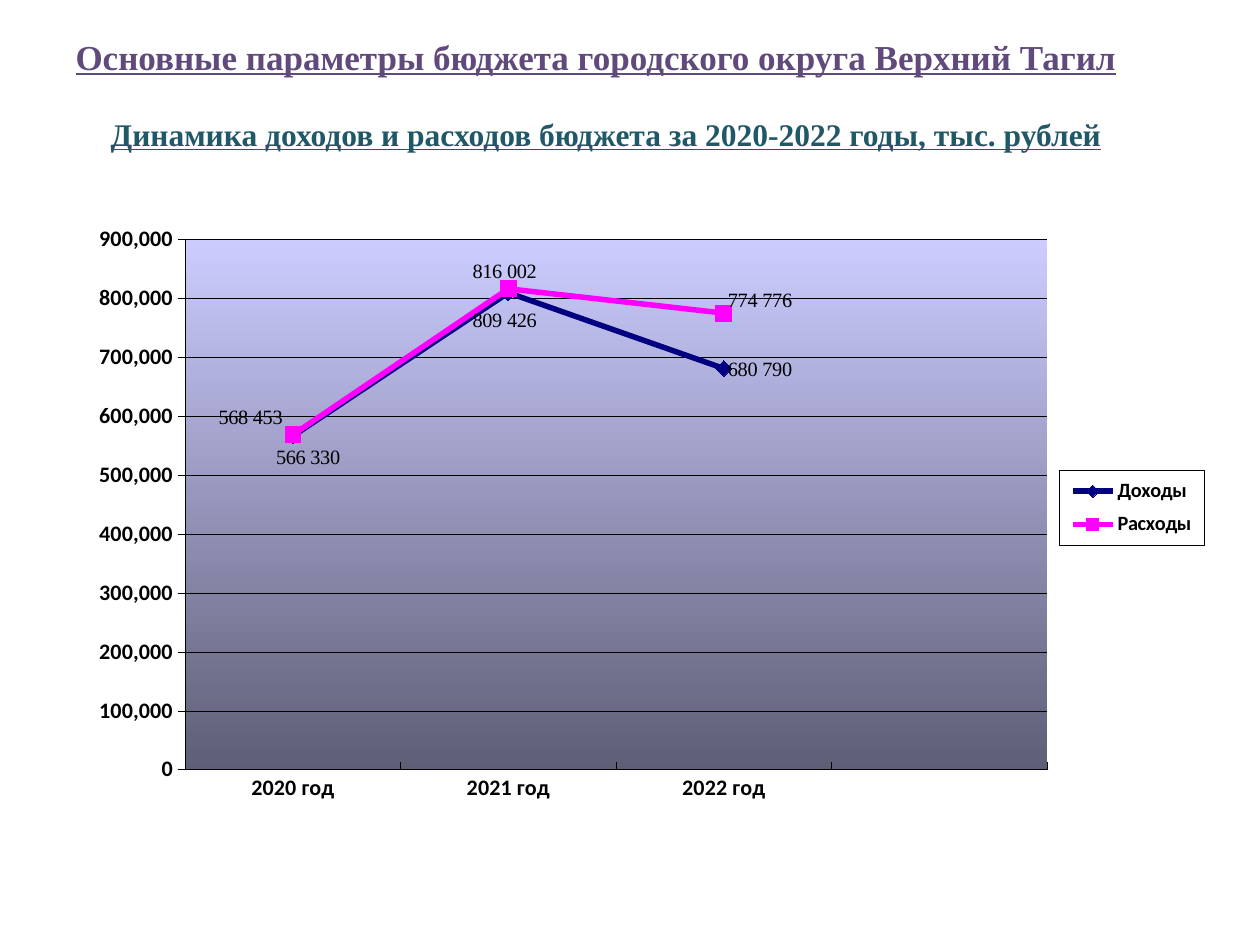
from pptx import Presentation
from pptx.chart.data import CategoryChartData
from pptx.dml.color import RGBColor
from pptx.enum.chart import (XL_CHART_TYPE, XL_LABEL_POSITION, XL_LEGEND_POSITION,
                             XL_MARKER_STYLE, XL_TICK_MARK)
from pptx.enum.text import MSO_ANCHOR, PP_ALIGN
from pptx.oxml import parse_xml
from pptx.oxml.ns import nsdecls
from pptx.util import Inches, Pt

LINE_MARKERS = XL_CHART_TYPE.LINE_MARKERS
ABOVE, BELOW = XL_LABEL_POSITION.ABOVE, XL_LABEL_POSITION.BELOW
LEFT, RIGHT = XL_LABEL_POSITION.LEFT, XL_LABEL_POSITION.RIGHT
LEGEND_RIGHT = XL_LEGEND_POSITION.RIGHT
DIAMOND, SQUARE = XL_MARKER_STYLE.DIAMOND, XL_MARKER_STYLE.SQUARE
TICK_INSIDE, TICK_CROSS, TICK_NONE = XL_TICK_MARK.INSIDE, XL_TICK_MARK.CROSS, XL_TICK_MARK.NONE
ALIGN_LEFT, ALIGN_CENTER = PP_ALIGN.LEFT, PP_ALIGN.CENTER
ANCHOR_TOP = MSO_ANCHOR.TOP

BLACK = RGBColor(0x00, 0x00, 0x00)
PURPLE = RGBColor(0x60, 0x4A, 0x7B)
TEAL = RGBColor(0x21, 0x58, 0x68)
NAVY = RGBColor(0x00, 0x00, 0x80)
MAGENTA = RGBColor(0xFF, 0x00, 0xFF)
WHITE = RGBColor(0xFF, 0xFF, 0xFF)
PLOT_TOP = RGBColor(0xCC, 0xCC, 0xFF)
PLOT_BOTTOM = RGBColor(0x5E, 0x5E, 0x76)

SERIF, SANS = "Times New Roman", "Calibri"
AMOUNT_FORMAT = "#,##0"
CHART_WIDTH, CHART_HEIGHT = 8.98, 5.08
YEARS = ["2020 год", "2021 год", "2022 год", ""]
SERIES = [
    ("Доходы", [566330, 809426, 680790, None], NAVY, DIAMOND,
     [(BELOW, 0.12, -0.01), (BELOW, -0.03, 0.04), (RIGHT, -0.07, 0.01)]),
    ("Расходы", [568453, 816002, 774776, None], MAGENTA, SQUARE,
     [(LEFT, 0.02, -0.13), (ABOVE, -0.03, 0.05), (RIGHT, -0.07, -0.1)]),
]


def set_font(font, name, size, color=BLACK, bold=True):
    font.name = name
    font.size = Pt(size)
    font.bold = bold
    font.color.rgb = color


def set_line(line, color, width):
    line.color.rgb = color
    line.width = Pt(width)


def add_heading(slide, text, left, top, width, height, size, color, align):
    heading = slide.shapes.add_textbox(Inches(left), Inches(top), Inches(width), Inches(height))
    frame = heading.text_frame
    frame.word_wrap = True
    frame.vertical_anchor = ANCHOR_TOP
    paragraph = frame.paragraphs[0]
    paragraph.text = text
    paragraph.alignment = align
    set_font(paragraph.font, SERIF, size, color)
    paragraph.font.underline = True


def place_in_chart(element, index, x, y, size=None, **settings):
    settings.update(x=x / CHART_WIDTH, y=y / CHART_HEIGHT)
    if size:
        settings.update(w=size[0] / CHART_WIDTH, h=size[1] / CHART_HEIGHT)
    items = "".join(f'<c:{key} val="{value}"/>' for key, value in settings.items())
    for existing in element.xpath("c:layout"):
        element.remove(existing)
    element.insert(index, parse_xml(f'<c:layout {nsdecls("c")}><c:manualLayout>{items}'
                                    '</c:manualLayout></c:layout>'))


def style_axis(axis, tick):
    axis.major_tick_mark = tick
    axis.minor_tick_mark = TICK_NONE
    set_font(axis.tick_labels.font, SANS, 12.6)
    set_line(axis.format.line, BLACK, 0.25)


def style_series(series, values, color, marker, placements):
    series.smooth = False
    set_line(series.format.line, color, 3.16)
    series.marker.style = marker
    series.marker.size = 9
    series.marker.format.fill.solid()
    series.marker.format.fill.fore_color.rgb = color
    series.marker.format.line.color.rgb = color
    labels = series.data_labels
    labels.show_value = True
    labels.number_format = AMOUNT_FORMAT
    labels.number_format_is_linked = False
    set_font(labels.font, SERIF, 11.6, bold=False)
    for index, (position, _, _) in enumerate(placements):
        label = series.points[index].data_label
        paragraph = label.text_frame.paragraphs[0]
        paragraph.text = f"{values[index]:,}".replace(",", " ")
        set_font(paragraph.font, SERIF, 11.6, bold=False)
        label.position = position
    point_labels = series._element.xpath("c:dLbls/c:dLbl")
    for label, (_, shift_x, shift_y) in zip(point_labels, placements):
        place_in_chart(label, 1, shift_x, shift_y)


def style_plot_area(chart):
    area = chart._chartSpace.chart.plotArea
    place_in_chart(area, 0, 0.85, 0.26, (6.84, 4.21),
                   layoutTarget="inner", xMode="edge", yMode="edge")
    area.append(parse_xml(
        f'<c:spPr {nsdecls("c", "a")}><a:gradFill><a:gsLst>'
        f'<a:gs pos="0"><a:srgbClr val="{PLOT_TOP}"/></a:gs>'
        f'<a:gs pos="100000"><a:srgbClr val="{PLOT_BOTTOM}"/></a:gs>'
        '</a:gsLst><a:lin ang="5400000" scaled="1"/></a:gradFill>'
        '<a:ln><a:noFill/></a:ln></c:spPr>'))


def add_legend(chart):
    chart.has_legend = True
    legend = chart.legend
    legend.position = LEGEND_RIGHT
    legend.include_in_layout = False
    set_font(legend.font, SANS, 11.6)
    element = legend._element
    place_in_chart(element, 1, 7.79, 2.09, (1.15, 0.6), xMode="edge", yMode="edge")
    element.xpath("c:txPr")[0].addprevious(parse_xml(
        f'<c:spPr {nsdecls("c", "a")}><a:solidFill><a:srgbClr val="{WHITE}"/></a:solidFill>'
        f'<a:ln w="{Pt(0.25)}"><a:solidFill><a:srgbClr val="{BLACK}"/></a:solidFill></a:ln>'
        '</c:spPr>'))


def add_budget_chart(slide):
    budget = CategoryChartData(number_format=AMOUNT_FORMAT)
    budget.categories = YEARS
    for name, values, *_ in SERIES:
        budget.add_series(name, values)
    chart = slide.shapes.add_chart(LINE_MARKERS, Inches(0.62), Inches(1.64),
                                   Inches(CHART_WIDTH), Inches(CHART_HEIGHT), budget).chart
    chart.has_title = False
    set_font(chart.font, SANS, 19.2)
    chart.plots[0].vary_by_categories = False
    style_axis(chart.category_axis, TICK_INSIDE)
    amounts = chart.value_axis
    style_axis(amounts, TICK_CROSS)
    amounts.minimum_scale, amounts.maximum_scale = 0, 900000
    amounts.major_unit = 100000
    amounts.tick_labels.number_format = AMOUNT_FORMAT
    amounts.tick_labels.number_format_is_linked = False
    set_line(amounts.major_gridlines.format.line, BLACK, 0.25)
    for series, (_, *style) in zip(chart.plots[0].series, SERIES):
        style_series(series, *style)
    style_plot_area(chart)
    add_legend(chart)


def main():
    deck = Presentation()
    deck.slide_width, deck.slide_height = Inches(10), Inches(7.5)
    slide = deck.slides.add_slide(deck.slide_layouts[6])
    add_heading(slide, "Основные параметры бюджета городского округа Верхний Тагил",
                0.47, 0.23, 8.52, 0.44, 20, PURPLE, ALIGN_CENTER)
    add_heading(slide, "Динамика доходов и расходов бюджета за 2020-2022 годы, тыс. рублей",
                0.78, 0.86, 8.13, 0.71, 18, TEAL, ALIGN_LEFT)
    add_budget_chart(slide)
    deck.save("out.pptx")


if __name__ == "__main__":
    main()
